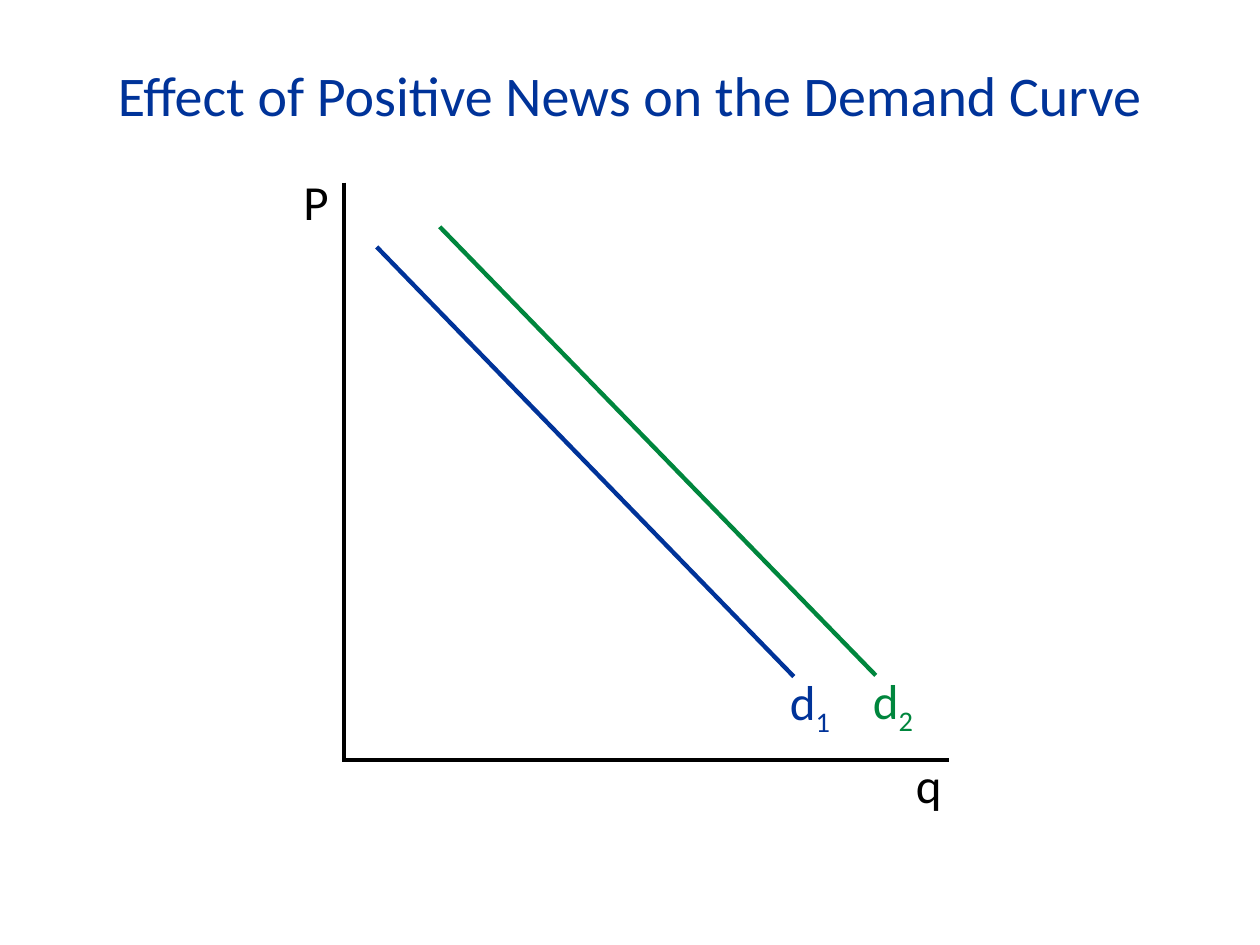
from lxml import etree
from pptx import Presentation
from pptx.dml.color import RGBColor
from pptx.enum.shapes import MSO_CONNECTOR
from pptx.enum.text import MSO_ANCHOR, PP_ALIGN
from pptx.oxml.ns import qn
from pptx.util import Inches, Pt

STRAIGHT = MSO_CONNECTOR.STRAIGHT
LEFT, CENTER = PP_ALIGN.LEFT, PP_ALIGN.CENTER
TOP, MIDDLE = MSO_ANCHOR.TOP, MSO_ANCHOR.MIDDLE

FONT = "Calibri"
COLORS = {"axis": "000000", "before": "003399", "after": "00863D"}


def add_text(slide, text, box, color, size=28, align=LEFT, anchor=TOP,
             spacing=1.0, subscript=""):
    frame = slide.shapes.add_textbox(*map(Inches, box)).text_frame
    frame.word_wrap = True
    frame.vertical_anchor = anchor
    paragraph = frame.paragraphs[0]
    paragraph.alignment = align
    paragraph.line_spacing = spacing
    for part in filter(None, (text, subscript)):
        run = paragraph.add_run()
        run.text = part
        run.font.name = FONT
        run.font.size = Pt(size)
        run.font.color.rgb = RGBColor.from_string(COLORS[color])
    if subscript:
        run.font._element.set("baseline", "-25000")


def add_line(slide, start, end, color):
    line = slide.shapes.add_connector(STRAIGHT, *map(Inches, start + end))
    line.line.color.rgb = RGBColor.from_string(COLORS[color])
    line.line.width = Pt(2.5)
    etree.SubElement(line._element.spPr, qn("a:effectLst"))


def add_axes(slide):
    add_line(slide, (2.73, 1.45), (2.73, 6.05), "axis")
    add_line(slide, (2.73, 6.03), (7.53, 6.03), "axis")
    add_text(slide, "q", (7.17, 5.94, 0.51, 0.57), "axis")
    add_text(slide, "P", (2.31, 1.4, 0.92, 0.49), "axis", spacing=0.8)


def add_demand_curve(slide, start, end, label_at, number, color):
    add_line(slide, start, end, color)
    add_text(slide, "d", label_at + (0.92, 0.49), color, spacing=0.8,
             subscript=number)


def main():
    prs = Presentation()
    prs.slide_width, prs.slide_height = Inches(10), Inches(7.5)
    slide = prs.slides.add_slide(prs.slide_layouts[6])

    add_text(slide, "Effect of Positive News on the Demand Curve",
             (0.7, 0.43, 8.6, 0.64), "before", size=32, align=CENTER,
             anchor=MIDDLE)
    add_axes(slide)
    add_demand_curve(slide, (2.99, 1.96), (6.3, 5.37), (6.17, 5.33), "1", "before")
    add_demand_curve(slide, (3.49, 1.8), (6.95, 5.36), (6.83, 5.32), "2", "after")

    prs.save("out.pptx")


if __name__ == "__main__":
    main()
